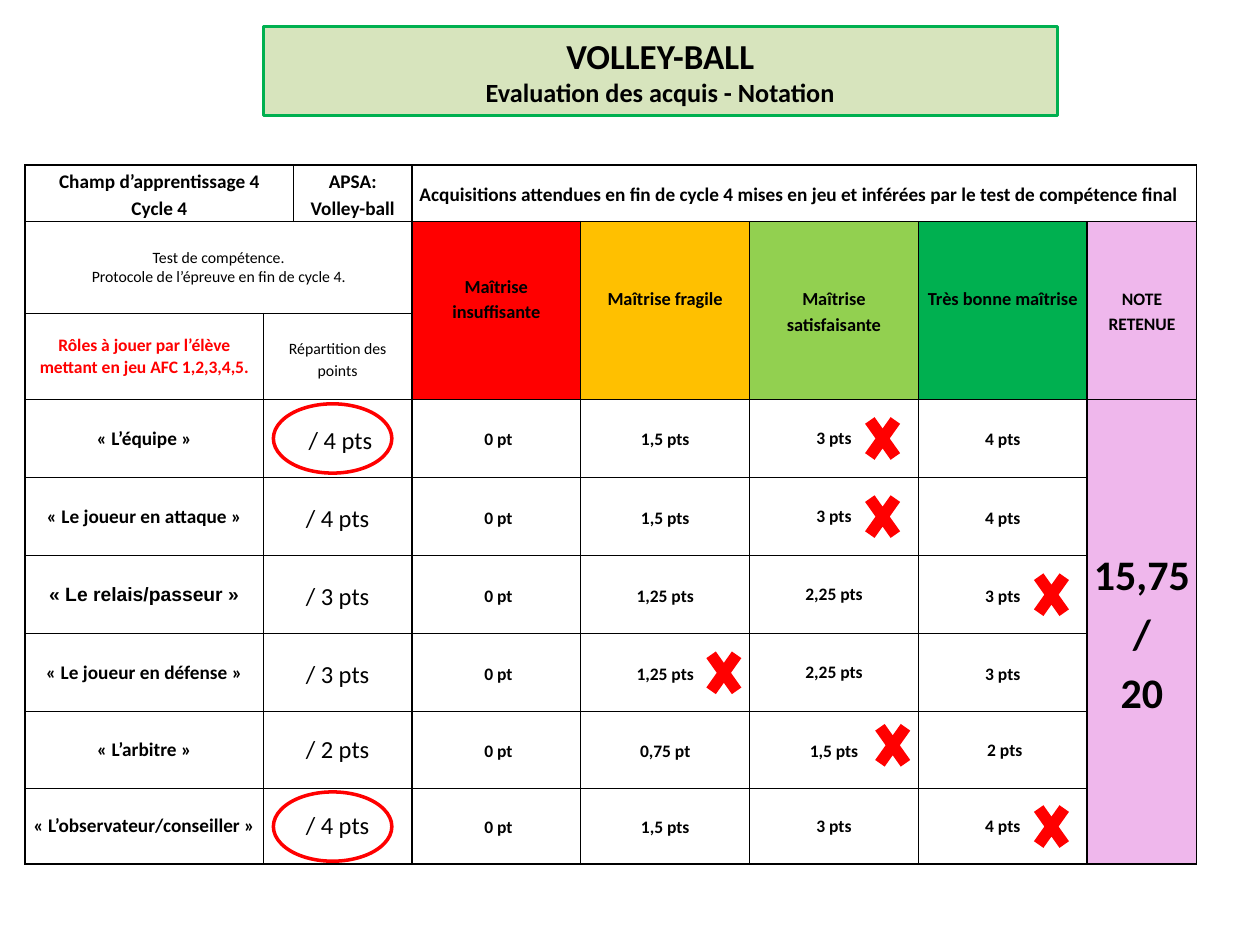
import dataclasses
import itertools

import pptx
import pptx.dml.color
import pptx.enum.shapes
import pptx.enum.text
import pptx.oxml.ns
import pptx.util
from lxml import etree

Inches = pptx.util.Inches
Pt = pptx.util.Pt
SHAPE = pptx.enum.shapes.MSO_SHAPE
ALIGN = pptx.enum.text.PP_ALIGN
ANCHOR = pptx.enum.text.MSO_ANCHOR


@dataclasses.dataclass(frozen=True)
class Theme:
    font: str = "Calibri"
    black: str = "000000"
    white: str = "FFFFFF"
    red: str = "FF0000"
    amber: str = "FFC000"
    light_green: str = "92D050"
    green: str = "00B050"
    pink: str = "EFB7EC"
    banner: str = "D7E4BD"
    title: float = 20
    subtitle: float = 15
    label: float = 11
    level: float = 10.5
    score: float = 10
    small: float = 9
    points: float = 14
    grade: float = 24


THEME = Theme()
COLUMNS = (1.89, 0.24, 0.94, 1.34, 1.34, 1.34, 1.34, 0.87)
ROWS = (0.45, 0.73, 0.68, 0.62, 0.62, 0.62, 0.62, 0.61, 0.6)
FIRST_ROLE_ROW, POINTS_COLUMN, FIRST_LEVEL, GRADE_COLUMN = 3, 1, 3, 7
LOOSE = 1.15


@dataclasses.dataclass(frozen=True)
class Role:
    name: str
    points: str
    scores: tuple
    reached: int  # index of the level that is crossed
    cross_left: float = 0.86
    cross_shift: float = 0
    circled: bool = False
    single: tuple = (2,)  # level indexes set in single spacing
    points_spacing: float = LOOSE
    font: str = THEME.font


ROLES = (
    Role("« L’équipe »", " / 4 pts", (" 0 pt", "1,5 pts", "3 pts", "4 pts"), 2, circled=True),
    Role("« Le joueur en attaque »", "/ 4 pts", (" 0 pt", "1,5 pts", "3 pts", "4 pts"), 2),
    Role("« Le relais/passeur »", "/ 3 pts", (" 0 pt", "1,25 pts", "2,25 pts", "3 pts"), 3,
         font="Arial"),
    Role("« Le joueur en défense »", "/ 3 pts", (" 0 pt", "1,25 pts", "2,25 pts", "3 pts"), 1,
         cross_left=0.94),
    Role("« L’arbitre »", "/ 2 pts", (" 0 pt", "0,75 pt", "1,5 pts", " 2 pts"), 2,
         cross_left=0.94, cross_shift=-0.04, single=(3,), points_spacing=1),
    Role("« L’observateur/conseiller »", "/ 4 pts", (" 0 pt", "1,5 pts", "3 pts", "4 pts"), 3,
         circled=True, single=(2, 3), points_spacing=1),
)
LEVELS = (
    ("Maîtrise insuffisante", THEME.red, 0.2),
    ("Maîtrise fragile", THEME.amber, 0.2),
    ("Maîtrise satisfaisante", THEME.light_green, 0),
    ("Très bonne maîtrise", THEME.green, 0.2),
)


def rgb(value):
    return pptx.dml.color.RGBColor.from_string(value)


def add_run(paragraph, text, size, bold=True, color=THEME.black, font=THEME.font):
    run = paragraph.add_run()
    run.text = text
    run.font.name = font
    run.font.size = Pt(size)
    run.font.bold = bold
    run.font.color.rgb = rgb(color)


def fill_cell(cell, lines, size, bold=True, color=THEME.black, font=THEME.font, fill=None,
              spacing=1, align=ALIGN.CENTER, anchor=ANCHOR.MIDDLE, side=0.06, top=0, bottom=0):
    """Write one paragraph per line; a line break inside a line stays in its paragraph."""
    cell.margin_left = cell.margin_right = Inches(side)
    cell.margin_top, cell.margin_bottom = Inches(top), Inches(bottom)
    cell.vertical_anchor = anchor
    if fill:
        cell.fill.solid()
        cell.fill.fore_color.rgb = rgb(fill)
    frame = cell.text_frame
    for index, line in enumerate(lines):
        paragraph = frame.add_paragraph() if index else frame.paragraphs[0]
        paragraph.alignment = align
        paragraph.line_spacing = spacing
        for part_index, part in enumerate(line.split("\n")):
            if part_index:
                paragraph.add_line_break()
            add_run(paragraph, part, size, bold, color, font)


def draw_borders(cell):
    properties = cell._tc.get_or_add_tcPr()
    for index, side in enumerate(("a:lnL", "a:lnR", "a:lnT", "a:lnB")):
        line = etree.Element(pptx.oxml.ns.qn(side), w=str(Pt(1)))
        solid = etree.SubElement(line, pptx.oxml.ns.qn("a:solidFill"))
        etree.SubElement(solid, pptx.oxml.ns.qn("a:srgbClr"), val=THEME.black)
        properties.insert(index, line)


def add_banner(slide, left, top, width, height):
    title = slide.shapes.title
    title.left, title.top, title.width, title.height = map(Inches, (left, top, width, height))
    title.fill.solid()
    title.fill.fore_color.rgb = rgb(THEME.banner)
    title.line.color.rgb = rgb(THEME.green)
    title.line.width = Pt(1.75)
    frame = title.text_frame
    frame.vertical_anchor = ANCHOR.MIDDLE
    frame.paragraphs[0].alignment = ALIGN.CENTER
    add_run(frame.paragraphs[0], "VOLLEY-BALL", THEME.title)
    subtitle = frame.add_paragraph()
    subtitle.alignment = ALIGN.CENTER
    add_run(subtitle, "Evaluation des acquis - Notation", THEME.subtitle)


def fill_header(table):
    for start, end in (((0, 0), (0, 1)), ((0, 3), (0, 7)), ((1, 0), (1, 2)), ((2, 1), (2, 2))):
        table.cell(*start).merge(table.cell(*end))
    fill_cell(table.cell(0, 0), ["Champ d’apprentissage 4\nCycle 4"], THEME.label, spacing=LOOSE)
    fill_cell(table.cell(0, 2), ["APSA: Volley-ball"], THEME.label, spacing=LOOSE)
    fill_cell(table.cell(0, 3), ["Acquisitions attendues en fin de cycle 4 mises en jeu et "
                                 "inférées par le test de compétence final"],
              THEME.label, spacing=LOOSE, align=ALIGN.LEFT)
    fill_cell(table.cell(1, 0), ["Test de compétence.", "Protocole de l’épreuve en fin de cycle 4."],
              THEME.small, bold=False)
    fill_cell(table.cell(2, 0), ["Rôles à jouer par l’élève mettant en jeu AFC 1,2,3,4,5."],
              THEME.score, color=THEME.red)
    fill_cell(table.cell(2, 1), ["Répartition des points"], THEME.small, bold=False,
              spacing=LOOSE, anchor=ANCHOR.TOP, top=0.18)
    for column, (name, color, bottom) in enumerate(LEVELS, FIRST_LEVEL):
        table.cell(1, column).merge(table.cell(2, column))
        fill_cell(table.cell(1, column), [name], THEME.level, fill=color, spacing=LOOSE, bottom=bottom)
    table.cell(1, GRADE_COLUMN).merge(table.cell(2, GRADE_COLUMN))
    fill_cell(table.cell(1, GRADE_COLUMN), ["NOTE RETENUE"], THEME.score, fill=THEME.pink, spacing=LOOSE)


def fill_roles(table):
    for row, role in enumerate(ROLES, FIRST_ROLE_ROW):
        fill_cell(table.cell(row, 0), [role.name], THEME.label, font=role.font)
        points = table.cell(row, POINTS_COLUMN)
        points.merge(table.cell(row, POINTS_COLUMN + 1))
        fill_cell(points, [role.points], THEME.points, bold=False, fill=THEME.white,
                  spacing=role.points_spacing)
        for level, score in enumerate(role.scores):
            fill_cell(table.cell(row, FIRST_LEVEL + level), [score], THEME.score, fill=THEME.white,
                      spacing=1 if level in role.single else LOOSE)
    grade = table.cell(FIRST_ROLE_ROW, GRADE_COLUMN)
    grade.merge(table.cell(len(ROWS) - 1, GRADE_COLUMN))
    fill_cell(grade, ["15,75", "/", "20"], THEME.grade, fill=THEME.pink, spacing=LOOSE, side=0.05)
    for paragraph in grade.text_frame.paragraphs:
        properties = paragraph._p.get_or_add_pPr()
        properties.set("marL", str(Inches(0.19)))
        properties.set("indent", str(-Inches(0.19)))


def add_grid(slide, left, top):
    frame = slide.shapes.add_table(len(ROWS), len(COLUMNS), Inches(left), Inches(top),
                                   Inches(sum(COLUMNS)), Inches(sum(ROWS)))
    table = frame.table
    table.first_row = table.horz_banding = False
    for column, width in zip(table.columns, COLUMNS):
        column.width = Inches(width)
    for row, height in zip(table.rows, ROWS):
        row.height = Inches(height)
    for cell in table.iter_cells():
        cell.fill.background()
        draw_borders(cell)
    fill_header(table)
    fill_roles(table)


def add_mark(slide, kind, left, middle, width, height=0.55):
    mark = slide.shapes.add_shape(kind, Inches(left), Inches(middle - height / 2),
                                  Inches(width), Inches(height))
    mark.shadow.inherit = False
    return mark


def add_marks(slide, left, top):
    """Circle the chosen roles and cross the level reached in each row of the grid."""
    lefts = list(itertools.accumulate(COLUMNS, initial=left))
    tops = list(itertools.accumulate(ROWS, initial=top))
    for row, role in enumerate(ROLES, FIRST_ROLE_ROW):
        middle = tops[row] + ROWS[row] / 2
        if role.circled:
            circle = add_mark(slide, SHAPE.OVAL, lefts[POINTS_COLUMN] + 0.08, middle, 0.94)
            circle.fill.background()
            circle.line.color.rgb = rgb(THEME.red)
            circle.line.width = Pt(2)
        cross = add_mark(slide, SHAPE.MATH_MULTIPLY, lefts[FIRST_LEVEL + role.reached] + role.cross_left,
                         middle + role.cross_shift, 0.39)
        cross.fill.solid()
        cross.fill.fore_color.rgb = rgb(THEME.red)
        cross.line.fill.background()


def main():
    presentation = pptx.Presentation()
    presentation.slide_width, presentation.slide_height = Inches(10), Inches(7.5)
    slide = presentation.slides.add_slide(presentation.slide_layouts[5])
    add_banner(slide, 2.09, 0.21, 6.3, 0.71)
    add_grid(slide, 0.2, 1.31)
    add_marks(slide, 0.2, 1.31)
    presentation.save("out.pptx")


if __name__ == "__main__":
    main()
